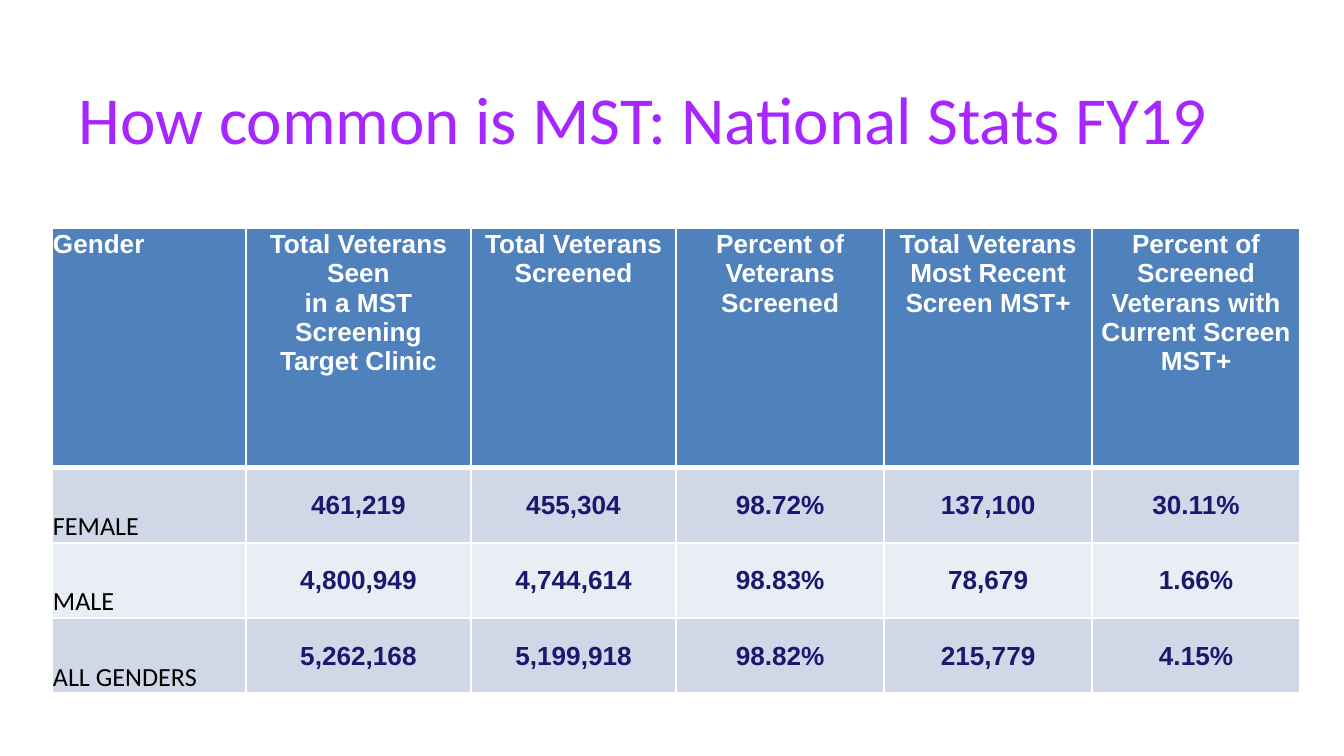
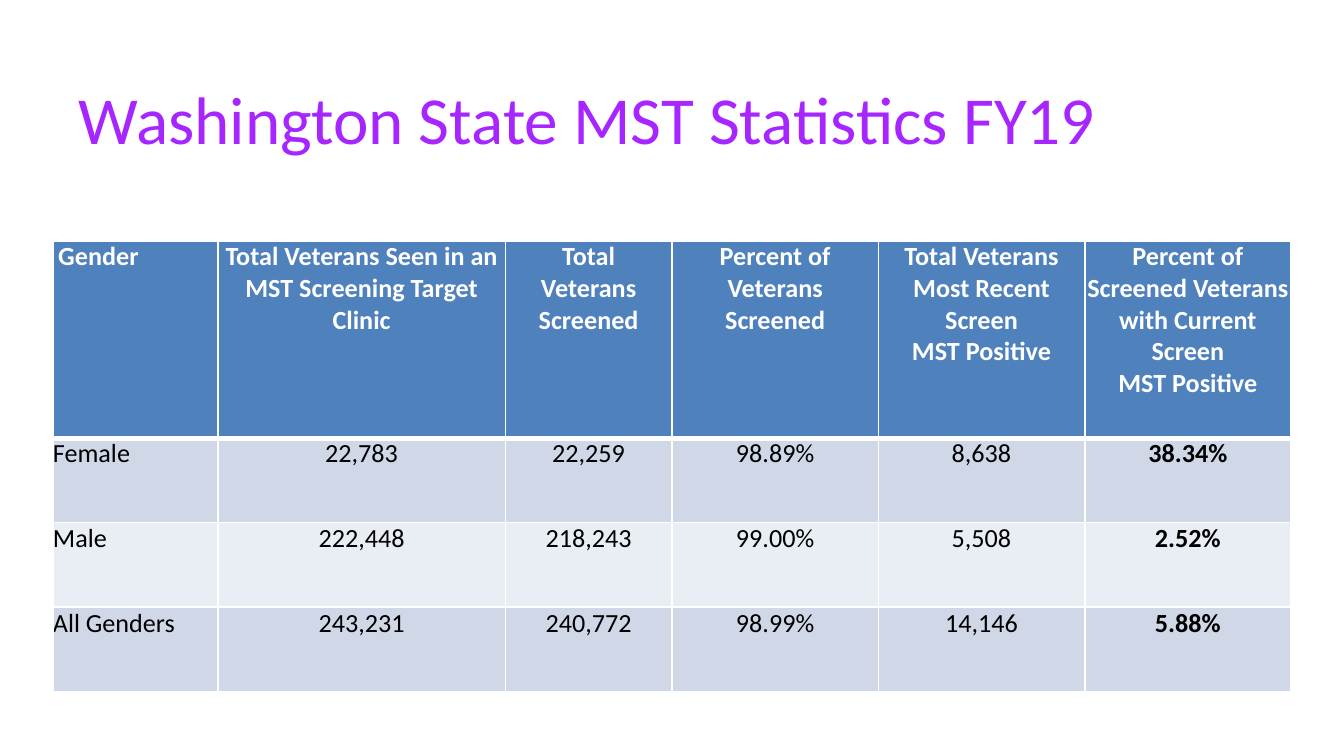
from lxml.etree import SubElement
from pptx import Presentation
from pptx.dml.color import RGBColor
from pptx.enum.text import MSO_ANCHOR, PP_ALIGN
from pptx.oxml.ns import qn
from pptx.util import Cm, Pt

# Shared look
TITLE, WHITE, BLACK, NAVY = "A725FF", "FFFFFF", "000000", "191970"
HEADER, BANDS = "4F81BD", ("D0D8E8", "E9EDF4")
TITLE_BOX = (1.24, 1.19, 22.91, 2.06)

# Text styles: font, colour, bold
ARIAL_HEAD = ("Arial", WHITE, True)
ARIAL_VALUE = ("Arial", NAVY, True)
CALIBRI_HEAD = ("Calibri", WHITE, True)
CALIBRI_BODY = ("Calibri", BLACK, False)
CALIBRI_BOLD = ("Calibri", BLACK, True)

NATIONAL = [
    ["Gender", "Total Veterans Seen\nin a MST Screening\nTarget Clinic",
     "Total Veterans\nScreened", "Percent of\nVeterans\nScreened",
     "Total Veterans\nMost Recent\nScreen MST+",
     "Percent of\nScreened Veterans with\nCurrent Screen\nMST+"],
    ["FEMALE", "461,219", "455,304", "98.72%", "137,100", "30.11%"],
    ["MALE", "4,800,949", "4,744,614", "98.83%", "78,679", "1.66%"],
    ["ALL GENDERS", "5,262,168", "5,199,918", "98.82%", "215,779", "4.15%"],
]
WASHINGTON = [
    ["Gender", "Total Veterans Seen in an\nMST Screening Target Clinic",
     "Total\nVeterans\nScreened", "Percent of\nVeterans\nScreened",
     "Total Veterans\nMost Recent Screen\nMST Positive",
     "Percent of\nScreened Veterans with Current Screen\nMST Positive"],
    ["Female", "22,783", "22,259", "98.89%", "8,638", "38.34%"],
    ["Male", "222,448", "218,243", "99.00%", "5,508", "2.52%"],
    ["All Genders", "243,231", "240,772", "98.99%", "14,146", "5.88%"],
]


def color(value):
    return RGBColor.from_string(value)


def add_run(p, text, size, style):
    font, text_color, bold = style
    r = p.add_run()
    r.text = text
    r.font.name, r.font.size, r.font.bold = font, Pt(size), bold
    r.font.color.rgb = color(text_color)


def add_title(s, box, text):
    tf = s.shapes.add_textbox(*map(Cm, box)).text_frame
    tf.word_wrap = True
    tf.vertical_anchor = MSO_ANCHOR.MIDDLE
    add_run(tf.paragraphs[0], text, 36, ("Calibri", TITLE, False))


def set_borders(cell, top, bottom):
    tcPr = cell._tc.get_or_add_tcPr()
    for tag, width in (("lnL", 1), ("lnR", 1), ("lnT", top), ("lnB", bottom)):
        ln = SubElement(tcPr, qn(f"a:{tag}"), w=str(Pt(width)))
        fill = SubElement(ln, qn("a:solidFill"))
        SubElement(fill, qn("a:srgbClr"), val=WHITE)


def fill_cell(cell, text, style, anchor, centered, margin):
    cell.margin_left = cell.margin_right = cell.margin_top = Cm(margin)
    cell.margin_bottom = 0
    cell.vertical_anchor = anchor
    tf = cell.text_frame
    for i, line in enumerate(text.split("\n")):
        p = tf.add_paragraph() if i else tf.paragraphs[0]
        p.alignment = PP_ALIGN.CENTER if centered else PP_ALIGN.LEFT
        add_run(p, line, 14, style)


def add_stats_table(s, box, rows, widths, head_height, style_of, margin=0):
    """style_of(row, column) gives the text style and anchor of a cell."""
    left, top, height = box
    row_height = (height - head_height) / (len(rows) - 1)
    frame = s.shapes.add_table(len(rows), len(widths), Cm(left), Cm(top),
                               Cm(sum(widths)), Cm(height))
    table = frame.table
    for column, width in zip(table.columns, widths):
        column.width = Cm(width)
    for i, values in enumerate(rows):
        table.rows[i].height = Cm(row_height if i else head_height)
        for j, text in enumerate(values):
            cell = table.cell(i, j)
            # Thick rule between the header and the first row
            set_borders(cell, 3 if i == 1 else 1, 1 if i else 3)
            cell.fill.solid()
            cell.fill.fore_color.rgb = color(BANDS[(i - 1) % 2] if i else HEADER)
            fill_cell(cell, text, *style_of(i, j), j > 0, margin)
    return table


def national_style(i, j):
    if i == 0:
        return ARIAL_HEAD, MSO_ANCHOR.TOP
    if j == 0:
        return CALIBRI_BODY, MSO_ANCHOR.BOTTOM
    return ARIAL_VALUE, MSO_ANCHOR.MIDDLE


def washington_style(i, j):
    if i == 0:
        return CALIBRI_HEAD, MSO_ANCHOR.TOP
    last = j == len(WASHINGTON[0]) - 1
    return (CALIBRI_BOLD if last else CALIBRI_BODY), MSO_ANCHOR.TOP


def national_slide(s):
    add_title(s, TITLE_BOX, "How common is MST: National Stats FY19")
    add_stats_table(s, (0.98, 4.32, 8.78), NATIONAL,
                    [3.67, 4.25, 3.88] + [3.93] * 3, 4.52, national_style, 0.02)


def washington_slide(s):
    add_title(s, TITLE_BOX, "Washington State MST Statistics FY19")
    table = add_stats_table(s, (1, 4.55, 8.53), WASHINGTON,
                            [3.12, 5.43, 3.15] + [3.9] * 3, 3.73, washington_style)
    # The first heading is set in slightly from the edge
    table.cell(0, 0).margin_left = Cm(0.1)


def main():
    prs = Presentation()
    prs.slide_width, prs.slide_height = Cm(25.4), Cm(14.29)
    for build in (national_slide, washington_slide):
        build(prs.slides.add_slide(prs.slide_layouts[6]))
    prs.save("out.pptx")


if __name__ == "__main__":
    main()
